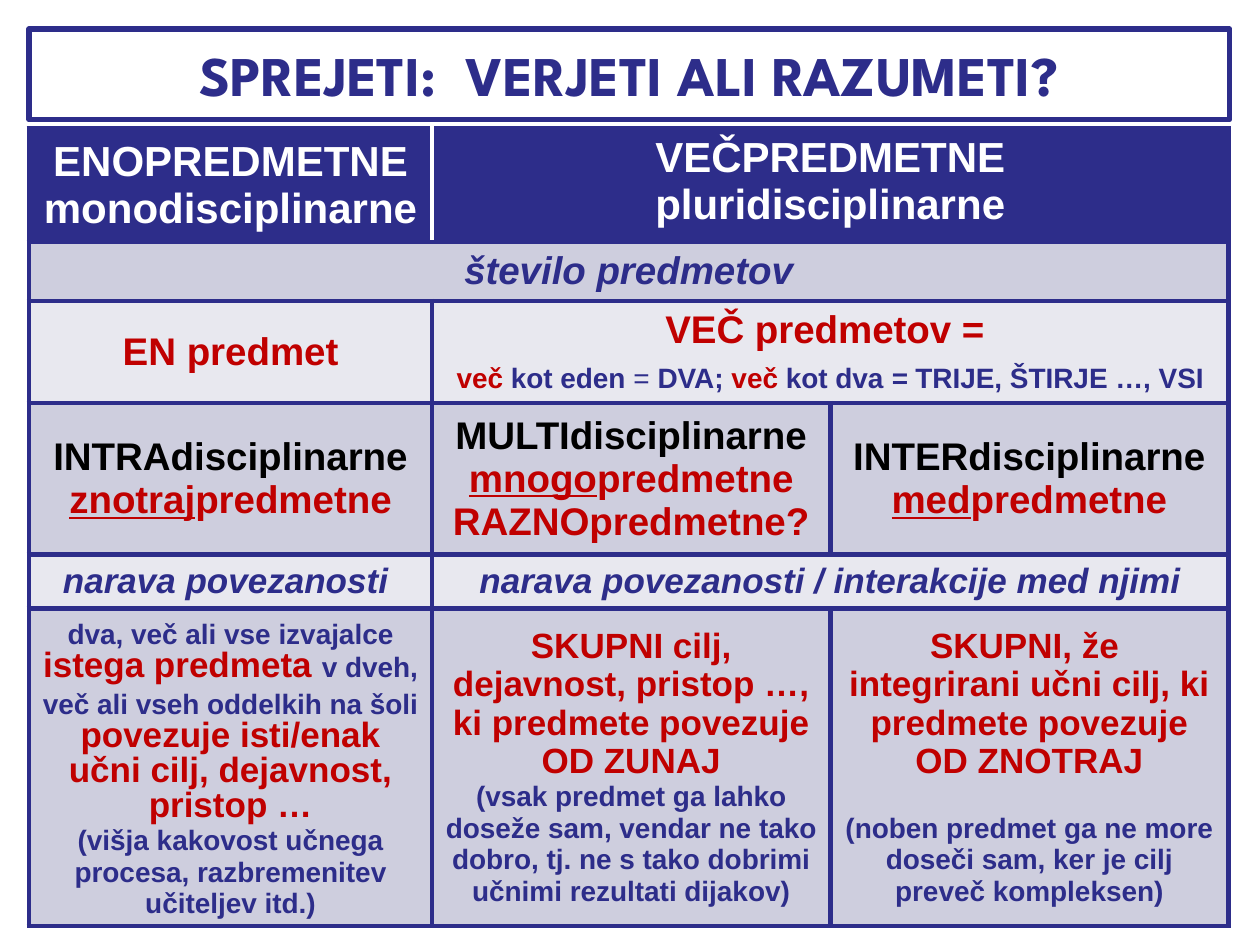
import lxml.etree
import pptx
import pptx.dml.color
import pptx.enum.text
import pptx.oxml.ns
import pptx.util
from pptx.util import Inches

COLORS = {"navy": "2D2D8A", "red": "C00000", "black": "000000", "white": "FFFFFF",
          "lilac": "CECEDE", "mist": "E8E8EF"}
COLUMNS = [3.2, 3.16, 3.16]
ROWS = [0.9, 0.47, 0.81, 1.2, 0.43, 2.52]
ROW_FILLS = ["navy", "lilac", "mist", "lilac", "mist", "lilac"]
MIDDLE = pptx.enum.text.MSO_ANCHOR.MIDDLE
CENTER = pptx.enum.text.PP_ALIGN.CENTER


def rgb(name):
    return pptx.dml.color.RGBColor.from_string(COLORS[name])


def style_span(span, size, color, marks="b", font="Arial"):
    """Marks: b bold, i italic, u underlined."""
    span.font.name = font
    span.font.size = pptx.util.Pt(size)
    span.font.color.rgb = rgb(color)
    span.font.bold = "b" in marks
    span.font.italic = "i" in marks
    span.font.underline = "u" in marks


def line(*spans, spacing=None, before=0):
    return {"spans": spans, "spacing": spacing, "before": before}


def heading(text):
    return line((text, 24, "white"))


def kind(prefix):
    return line((prefix + "disciplinarne", 22, "black"))


def translation(prefix):
    return line((prefix, 22, "red", "bu"), ("predmetne", 22, "red"))


def goal(text):
    return line((text, 20, "red"), spacing=22)


def remark(text, before=0):
    return line((text, 16, "navy"), spacing=18, before=before)


# Each row lists its cells as (columns spanned, paragraphs)
CELLS = [
    [(1, [heading("ENOPREDMETNE"), heading("monodisciplinarne")]),
     (2, [heading("VEČPREDMETNE"), heading("pluridisciplinarne")])],
    [(3, [line(("število predmetov", 22, "navy", "bi"))])],
    [(1, [line(("EN predmet", 22, "red"))]),
     (2, [line(("VEČ predmetov = ", 22, "red"), spacing=24),
          line(("več", 16, "red"), (" kot eden ", 16, "navy"), ("= ", 16, "navy", ""),
               ("DVA; ", 16, "navy"), ("več", 16, "red"), (" kot dva ", 16, "navy"),
               ("= ", 16, "navy", "bi"), ("TRIJE, ŠTIRJE …, VSI", 16, "navy"),
               spacing=24)])],
    [(1, [kind("INTRA"), translation("znotraj")]),
     (1, [kind("MULTI"), translation("mnogo"), line(("RAZNOpredmetne?", 22, "red"))]),
     (1, [kind("INTER"), translation("med")])],
    [(1, [line(("narava povezanosti ", 20, "navy", "bi"))]),
     (2, [line(("narava povezanosti / interakcije med njimi", 20, "navy", "bi"))])],
    [(1, [line(("dva, več ali vse izvajalce ", 16, "navy"),
               ("istega predmeta ", 20, "red"),
               ("v dveh, več ali vseh oddelkih na šoli ", 16, "navy"),
               ("povezuje isti/enak učni cilj, dejavnost, pristop …", 20, "red"),
               spacing=20),
          remark("(višja kakovost učnega procesa, razbremenitev učiteljev itd.)")]),
     (1, [goal("SKUPNI cilj, dejavnost, pristop …, ki predmete povezuje OD ZUNAJ"),
          remark("(vsak predmet ga lahko doseže sam, vendar ne tako dobro, "
                 "tj. ne s tako dobrimi učnimi rezultati dijakov)")]),
     (1, [goal("SKUPNI, že "),
          goal("integrirani učni cilj, ki predmete povezuje OD ZNOTRAJ"),
          remark("(noben predmet ga ne more doseči sam, ker je cilj preveč kompleksen)",
                 before=18)])],
]


def set_borders(cell, white_side=None):
    """Draw all four sides in navy, except for one white side."""
    properties = cell._tc.get_or_add_tcPr()
    for index, side in enumerate("LRTB"):
        border = lxml.etree.Element(pptx.oxml.ns.qn(f"a:ln{side}"), w=str(pptx.util.Pt(3)))
        fill = lxml.etree.SubElement(border, pptx.oxml.ns.qn("a:solidFill"))
        color = COLORS["white" if side == white_side else "navy"]
        lxml.etree.SubElement(fill, pptx.oxml.ns.qn("a:srgbClr"), val=color)
        properties.insert(index, border)


def write_cell(cell, lines):
    frame = cell.text_frame
    for index, content in enumerate(lines):
        para = frame.add_paragraph() if index else frame.paragraphs[0]
        para.alignment = CENTER
        if content["spacing"]:
            para.line_spacing = pptx.util.Pt(content["spacing"])
        if content["before"]:
            para.space_before = pptx.util.Pt(content["before"])
        for text, *style in content["spans"]:
            span = para.add_run()
            span.text = text
            style_span(span, *style)


def place_title(page, left, top, width, height):
    title = page.shapes.title
    title.left, title.top, title.width, title.height = left, top, width, height
    title.fill.solid()
    title.fill.fore_color.rgb = rgb("white")
    title.line.color.rgb = rgb("navy")
    title.line.width = pptx.util.Pt(3)
    frame = title.text_frame
    frame.text = "SPREJETI:  VERJETI ALI RAZUMETI?"
    frame.auto_size = pptx.enum.text.MSO_AUTO_SIZE.NONE
    frame.vertical_anchor = MIDDLE
    frame.paragraphs[0].alignment = CENTER
    style_span(frame.paragraphs[0].runs[0], 32, "navy", font="League Spartan")


def place_table(page, left, top, width, height):
    table = page.shapes.add_table(len(ROWS), len(COLUMNS), left, top, width, height).table
    for column, size in zip(table.columns, COLUMNS):
        column.width = Inches(size)
    for row, size in zip(table.rows, ROWS):
        row.height = Inches(size)

    # Fills and borders, with a white divider in the header
    for row, fill in enumerate(ROW_FILLS):
        for column in range(len(COLUMNS)):
            cell = table.cell(row, column)
            cell.fill.solid()
            cell.fill.fore_color.rgb = rgb(fill)
            cell.vertical_anchor = MIDDLE
            set_borders(cell, {0: "R", 1: "L"}.get(column) if row == 0 else None)
    table.cell(0, 1).vertical_anchor = pptx.enum.text.MSO_ANCHOR.TOP

    # Merged cells and their text
    for row, cells in enumerate(CELLS):
        column = 0
        for span, lines in cells:
            cell = table.cell(row, column)
            if span > 1:
                cell.merge(table.cell(row, column + span - 1))
            write_cell(cell, lines)
            column += span


def main():
    deck = pptx.Presentation()
    deck.slide_width, deck.slide_height = Inches(10), Inches(7.5)
    page = deck.slides.add_slide(deck.slide_layouts[5])
    place_title(page, Inches(0.23), Inches(0.23), Inches(9.53), Inches(0.72))
    place_table(page, Inches(0.23), Inches(1.02), Inches(9.53), Inches(6.34))
    deck.save("out.pptx")


if __name__ == "__main__":
    main()
